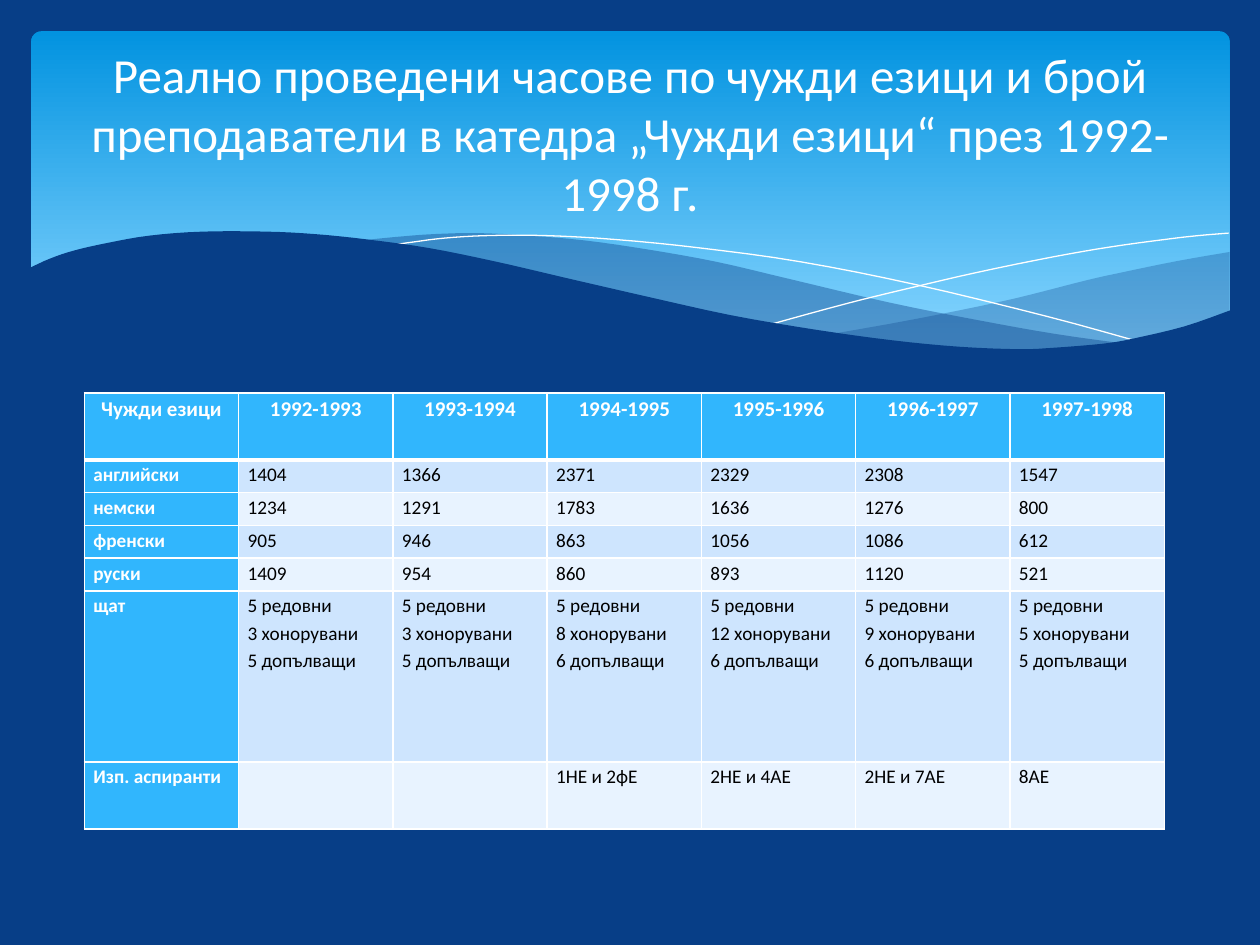
import lxml.etree
import pptx
import pptx.dml.color
import pptx.enum.dml
import pptx.enum.shapes
import pptx.enum.text
import pptx.oxml.ns
import pptx.util

Cm, Pt = pptx.util.Cm, pptx.util.Pt
RGBColor = pptx.dml.color.RGBColor
qn = pptx.oxml.ns.qn
PP_ALIGN = pptx.enum.text.PP_ALIGN

NAVY = RGBColor(0x07, 0x3E, 0x87)
SKY_TOP = RGBColor(0x02, 0x93, 0xE0)
SKY_BOTTOM = RGBColor(0x83, 0xD3, 0xFE)
HEADER_BLUE = RGBColor(0x31, 0xB6, 0xFD)
BAND_DARK = RGBColor(0xCE, 0xE5, 0xFE)
BAND_LIGHT = RGBColor(0xE8, 0xF3, 0xFF)
WHITE = RGBColor(0xFF, 0xFF, 0xFF)
BLACK = RGBColor(0x00, 0x00, 0x00)
FONT = "Calibri"

# Content
TITLE = ("Реално проведени часове по чужди езици и брой преподаватели "
         "в катедра „Чужди езици“ през 1992-1998 г.")
STAFF = [(5, 3, 5), (5, 3, 5), (5, 8, 6), (5, 12, 6), (5, 9, 6), (5, 5, 5)]
STAFF_TEXT = [f"{regular} редовни\n{hourly} хонорувани\n{extra} допълващи"
              for regular, hourly, extra in STAFF]
ROWS = [
    ["Чужди езици"] + [f"{year}-{year + 1}" for year in range(1992, 1998)],
    ["английски", "1404", "1366", "2371", "2329", "2308", "1547"],
    ["немски", "1234", "1291", "1783", "1636", "1276", "800"],
    ["френски", "905", "946", "863", "1056", "1086", "612"],
    ["руски", "1409", "954", "860", "893", "1120", "521"],
    ["щат"] + STAFF_TEXT,
    ["Изп. аспиранти", "", "", "1НЕ и 2фЕ", "2НЕ и 4АЕ", "2НЕ и 7АЕ", "8АЕ"],
]
ROW_HEIGHTS = [1.35, 0.66, 0.66, 0.66, 0.66, 3.45, 1.35]
COLUMN_WIDTH = 3.11

# Wave edges: knots in cm that a smooth curve passes through
RIGHT_TOP = [(24.79, 5.08), (23.75, 5.26), (22.63, 5.49), (21.87, 5.66),
             (20.45, 6.02), (19.13, 6.3), (17.93, 6.53), (16.79, 6.73)]
RIGHT_BOTTOM = [(16.79, 6.73), (18.26, 6.91), (19.53, 7.01), (20.68, 7.06),
                (21.69, 7.03), (22.58, 6.93), (23.39, 6.73), (24.1, 6.53),
                (24.79, 6.27)]
MIDDLE_TOP = [(22.68, 6.93), (21.26, 6.73), (19.69, 6.45), (17.93, 6.1),
              (15.98, 5.64), (14.45, 5.28), (13.06, 5.03), (11.81, 4.85),
              (10.67, 4.75), (9.65, 4.7), (8.74, 4.72), (7.95, 4.78),
              (7.26, 4.85)]
MIDDLE_BOTTOM = [(7.26, 4.85), (8.69, 5.05), (10.26, 5.36), (11.4, 5.64),
                 (12.47, 5.89), (14.38, 6.3), (16.1, 6.63), (17.65, 6.86),
                 (19, 7.01), (20.22, 7.06), (21.29, 7.06), (22.02, 7.01),
                 (22.68, 6.93)]
FALLING_LINE = [(7.85, 4.95), (8.33, 4.88), (8.97, 4.8), (9.83, 4.75),
                (11, 4.75), (12.42, 4.83), (14.12, 5), (16.15, 5.28),
                (18.47, 5.74), (21.11, 6.38), (23.04, 6.91)]
RISING_LINE = [(15.57, 6.53), (17.07, 6.12), (18.29, 5.82), (19.71, 5.49),
               (21.23, 5.18), (22.38, 4.98), (23.47, 4.83), (24.16, 4.75),
               (24.77, 4.7)]
FRONT_TOP = [(24.82, 6.25), (23.88, 6.58), (22.83, 6.83), (22.23, 6.93),
             (21.26, 7.01), (20.55, 7.04), (19.33, 6.99), (17.98, 6.86),
             (16.46, 6.65), (14.71, 6.35), (12.78, 5.92), (11.35, 5.59),
             (9.93, 5.26), (8.64, 5), (7.42, 4.83), (6.35, 4.72),
             (5.36, 4.67), (4.09, 4.67), (3.02, 4.75), (2.16, 4.9),
             (1.5, 5.05), (1.02, 5.21), (0.58, 5.41)]
FRONT_BASE = [(0.58, 8.36), (24.82, 8.36)]


def smooth(knots, steps=4):
    """Points of a Catmull-Rom curve through the knots."""
    padded = [knots[0], *knots, knots[-1]]
    points = [knots[0]]
    for a, b, c, d in zip(padded, padded[1:], padded[2:], padded[3:]):
        for step in range(1, steps + 1):
            t = step / steps
            points.append(tuple(
                (2 * q + (r - p) * t + (2 * p - 5 * q + 4 * r - s) * t ** 2
                 + (3 * q - p - 3 * r + s) * t ** 3) / 2
                for p, q, r, s in zip(a, b, c, d)))
    return points


def add_outline(page, points, closed):
    points = [(Cm(x), Cm(y)) for x, y in points]
    builder = page.shapes.build_freeform(*points[0], scale=1.0)
    builder.add_line_segments(points[1:], close=closed)
    shape = builder.convert_to_shape()
    shape.shadow.inherit = False
    return shape


def add_wave(page, points, opacity=100):
    wave = add_outline(page, points, True)
    wave.fill.solid()
    wave.fill.fore_color.rgb = NAVY
    wave.line.fill.background()
    if opacity < 100:
        color = wave.fill._xPr.find(qn("a:solidFill"))[0]
        lxml.etree.SubElement(color, qn("a:alpha"), val=str(opacity * 1000))


def add_hairline(page, knots):
    curve = add_outline(page, smooth(knots), False)
    curve.fill.background()
    curve.line.color.rgb = WHITE
    curve.line.width = Pt(0)


def style_text(frame, size, color, bold, align, spacing):
    for paragraph in frame.paragraphs:
        paragraph.alignment = align
        paragraph.line_spacing = spacing
        for span in paragraph.runs:
            span.font.name = FONT
            span.font.size = Pt(size)
            span.font.bold = bold
            span.font.color.rgb = color


def set_borders(cell, row):
    widths = {"L": 1, "R": 1, "T": 3 if row == 1 else 1, "B": 3 if row == 0 else 1}
    properties = cell._tc.get_or_add_tcPr()
    for side, width in widths.items():
        line = lxml.etree.SubElement(properties, qn(f"a:ln{side}"), w=str(Pt(width)))
        fill = lxml.etree.SubElement(line, qn("a:solidFill"))
        lxml.etree.SubElement(fill, qn("a:srgbClr"), val=str(WHITE))


def fill_cell(cell, row, column, text):
    heading = row == 0 or column == 0
    set_borders(cell, row)
    cell.fill.solid()
    cell.fill.fore_color.rgb = (HEADER_BLUE if heading
                                else BAND_DARK if row % 2 else BAND_LIGHT)
    cell.margin_left = cell.margin_right = Cm(0.18)
    cell.margin_top = cell.margin_bottom = 0
    cell.text_frame.text = text
    style_text(cell.text_frame, 11 if row else 12, WHITE if heading else BLACK,
               heading, PP_ALIGN.LEFT if row else PP_ALIGN.CENTER, 1.15)


def main():
    deck = pptx.Presentation()
    deck.slide_width, deck.slide_height = Cm(25.4), Cm(19.05)
    page = deck.slides.add_slide(deck.slide_layouts[6])
    page.background.fill.solid()
    page.background.fill.fore_color.rgb = NAVY

    # Sky panel
    sky = page.shapes.add_shape(pptx.enum.shapes.MSO_SHAPE.ROUNDED_RECTANGLE,
                                Cm(0.63), Cm(0.63), Cm(24.16), Cm(6.86))
    sky.adjustments[0] = 0.03
    sky.shadow.inherit = False
    sky.line.fill.background()
    sky.fill.gradient()
    sky.fill.gradient_angle = 270
    stops = zip(sky.fill.gradient_stops, (0, 0.9), (SKY_TOP, SKY_BOTTOM))
    for stop, position, color in stops:
        stop.position = position
        stop.color.rgb = color

    # Waves
    add_wave(page, smooth(RIGHT_TOP) + smooth(RIGHT_BOTTOM), 29)
    add_wave(page, smooth(MIDDLE_TOP) + smooth(MIDDLE_BOTTOM), 40)
    add_hairline(page, FALLING_LINE)
    add_hairline(page, RISING_LINE)
    add_wave(page, smooth(FRONT_TOP) + FRONT_BASE)

    # Table of hours and staff
    table = page.shapes.add_table(
        len(ROWS), len(ROWS[0]), Cm(1.7), Cm(7.92),
        Cm(COLUMN_WIDTH * len(ROWS[0])), Cm(sum(ROW_HEIGHTS))).table
    for column in table.columns:
        column.width = Cm(COLUMN_WIDTH)
    for row, texts in enumerate(ROWS):
        table.rows[row].height = Cm(ROW_HEIGHTS[row])
        for column, text in enumerate(texts):
            fill_cell(table.cell(row, column), row, column, text)

    # Title
    title = page.shapes.add_textbox(Cm(1.27), Cm(0.94), Cm(22.86), Cm(3.48))
    title.text_frame.word_wrap = True
    title.text_frame.vertical_anchor = pptx.enum.text.MSO_ANCHOR.MIDDLE
    title.text_frame.text = TITLE
    style_text(title.text_frame, 28, WHITE, False, PP_ALIGN.CENTER, 1.0)

    deck.save("out.pptx")


if __name__ == "__main__":
    main()
